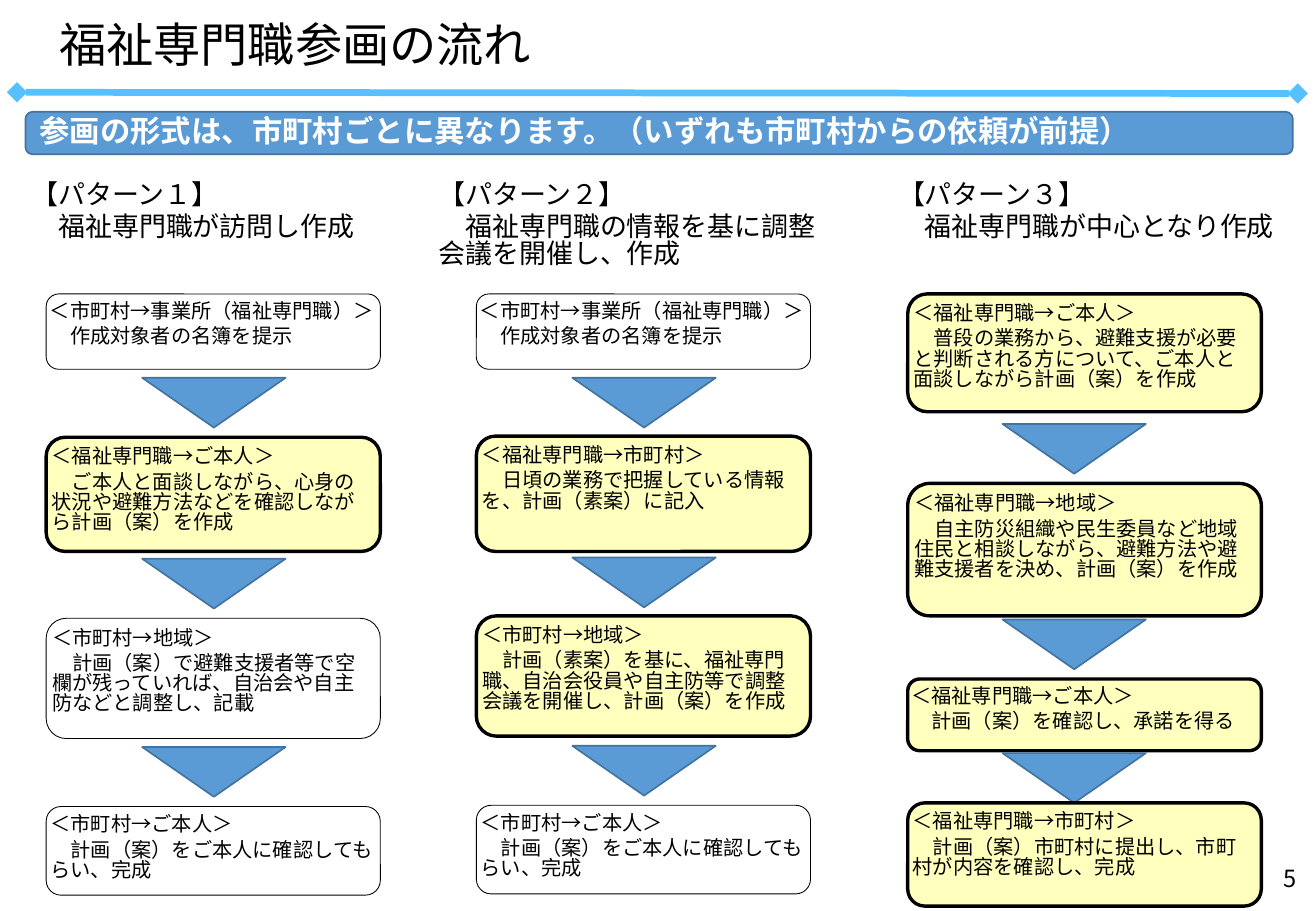
from dataclasses import dataclass

from lxml import etree
from pptx import Presentation
from pptx.dml.color import RGBColor
from pptx.enum.shapes import MSO_CONNECTOR, MSO_SHAPE
from pptx.enum.text import MSO_ANCHOR, PP_ALIGN
from pptx.oxml.ns import qn
from pptx.util import Pt

EMU_PER_PX = 9144  # 100 px to the inch
FONT = "Noto Sans CJK JP"
BLACK, WHITE, YELLOW = "000000", "FFFFFF", "FFFFBE"
BLUE, DARK_BLUE, SKY = "5B9BD5", "43739E", "57C0FF"
ROUNDED, TRIANGLE = MSO_SHAPE.ROUNDED_RECTANGLE, MSO_SHAPE.ISOSCELES_TRIANGLE
STRAIGHT = MSO_CONNECTOR.STRAIGHT
TOP, MIDDLE = MSO_ANCHOR.TOP, MSO_ANCHOR.MIDDLE
LEFT, RIGHT = PP_ALIGN.LEFT, PP_ALIGN.RIGHT
ARROW_WIDTH, ARROW_HEIGHT = 118, 41
STEP_INSETS = (0, 4)


@dataclass
class Step:
    top: int
    height: int
    by_specialist: bool
    route: str
    action: str
    arrow_top: int | None = None


@dataclass
class Pattern:
    heading_left: int
    heading_width: int
    heading: list[str]
    left: int
    width: int
    arrow_left: int
    steps: list[Step]


PATTERNS = [
    Pattern(26, 299, ["【パターン１】", "　福祉専門職が訪問し作成"], 38, 275, 117, [
        Step(242, 62, False, "＜市町村→事業所（福祉専門職）＞", "　作成対象者の名簿を提示", 311),
        Step(360, 94, True, "＜福祉専門職→ご本人＞",
             "　ご本人と面談しながら、心身の状況や避難方法などを確認しながら計画（案）を作成", 460),
        Step(509, 99, False, "＜市町村→地域＞",
             "　計画（案）で避難支援者等で空欄が残っていれば、自治会や自主防などと調整し、記載", 615),
        Step(664, 73, False, "＜市町村→ご本人＞", "　計画（案）をご本人に確認してもらい、完成"),
    ]),
    Pattern(361, 323, ["【パターン２】", "　福祉専門職の情報を基に調整会議を開催し、作成"], 392, 275, 471, [
        Step(242, 62, False, "＜市町村→事業所（福祉専門職）＞", "　作成対象者の名簿を提示", 311),
        Step(359, 95, True, "＜福祉専門職→市町村＞",
             "　日頃の業務で把握している情報を、計画（素案）に記入", 459),
        Step(507, 99, True, "＜市町村→地域＞",
             "　計画（素案）を基に、福祉専門職、自治会役員や自主防等で調整会議を開催し、計画（案）を作成", 614),
        Step(663, 73, False, "＜市町村→ご本人＞", "　計画（案）をご本人に確認してもらい、完成"),
    ]),
    Pattern(739, 322, ["【パターン３】", "　福祉専門職が中心となり作成"], 747, 291, 825, [
        Step(242, 97, True, "＜福祉専門職→ご本人＞",
             "　普段の業務から、避難支援が必要と判断される方について、ご本人と面談しながら計画（案）を作成", 349),
        Step(398, 109, True, "＜福祉専門職→地域＞",
             "　自主防災組織や民生委員など地域住民と相談しながら、避難方法や避難支援者を決め、計画（案）を作成", 510),
        Step(559, 59, True, "＜福祉専門職→ご本人＞", "　計画（案）を確認し、承諾を得る", 620),
        Step(661, 85, True, "＜福祉専門職→市町村＞", "　計画（案）市町村に提出し、市町村が内容を確認し、完成"),
    ]),
]


def px(length: int) -> int:
    return length * EMU_PER_PX


def rgb(value: str) -> RGBColor:
    return RGBColor.from_string(value)


def write(box, lines: list[str], size: int, color: str = BLACK, bold: bool = False,
          align=LEFT, anchor=TOP, insets: tuple[int, int] = (10, 5),
          spacing: float = 0.83) -> None:
    frame = box.text_frame
    frame.word_wrap = True
    frame.vertical_anchor = anchor
    frame.margin_left = frame.margin_right = px(insets[0])
    frame.margin_top = frame.margin_bottom = px(insets[1])
    frame.text = "\n".join(lines)
    for index, para in enumerate(frame.paragraphs):
        para.alignment = align
        para.line_spacing = spacing
        para.space_before = Pt(3 if index else 0)
        for span in para.runs:
            span.font.size = Pt(size)
            span.font.bold = bold
            span.font.color.rgb = rgb(color)
            span.font.name = FONT
            etree.SubElement(span.font._element, qn("a:ea"), typeface=FONT)


def add_text(page, left: int, top: int, width: int, height: int):
    return page.shapes.add_textbox(px(left), px(top), px(width), px(height))


def add_box(page, kind, left: int, top: int, width: int, height: int,
            fill: str | None, line: str, weight: float):
    box = page.shapes.add_shape(kind, px(left), px(top), px(width), px(height))
    box.shadow.inherit = False
    if fill:
        box.fill.solid()
        box.fill.fore_color.rgb = rgb(fill)
    else:
        box.fill.background()
    box.line.color.rgb = rgb(line)
    box.line.width = Pt(weight)
    return box


def add_rule(page) -> None:
    rule = page.shapes.add_connector(STRAIGHT, px(14), px(76), px(1068), px(77))
    rule.line.color.rgb = rgb(SKY)
    rule.line.width = Pt(4)
    outline = rule.line._get_or_add_ln()
    for end in ("a:headEnd", "a:tailEnd"):
        etree.SubElement(outline, qn(end), type="diamond")
    etree.SubElement(rule._element.spPr, qn("a:effectLst"))


def add_pattern(page, pattern: Pattern) -> None:
    heading = add_text(page, pattern.heading_left, 147, pattern.heading_width, 79)
    write(heading, pattern.heading, 16, insets=STEP_INSETS)
    for step in pattern.steps:
        fill, weight = (YELLOW, 2) if step.by_specialist else (None, 0.5)
        box = add_box(page, ROUNDED, pattern.left, step.top, pattern.width, step.height,
                      fill, BLACK, weight)
        write(box, [step.route, step.action], 12, insets=STEP_INSETS)
        if step.arrow_top is not None:
            arrow = add_box(page, TRIANGLE, pattern.arrow_left, step.arrow_top,
                            ARROW_WIDTH, ARROW_HEIGHT, BLUE, DARK_BLUE, 1)
            arrow.rotation = 180


def main() -> None:
    deck = Presentation()
    deck.slide_width, deck.slide_height = px(1083), px(750)
    page = deck.slides.add_slide(deck.slide_layouts[6])

    # Title and rule
    write(add_text(page, 0, 13, 1083, 48), ["　福祉専門職参画の流れ"], 28, spacing=0.9)
    add_rule(page)

    # Key message
    banner = add_box(page, ROUNDED, 21, 92, 1043, 35, BLUE, DARK_BLUE, 1)
    write(banner, ["参画の形式は、市町村ごとに異なります。（いずれも市町村からの依頼が前提）"],
          18, WHITE, bold=True, anchor=MIDDLE)

    # Three flows
    for pattern in PATTERNS:
        add_pattern(page, pattern)

    # Page number
    write(add_text(page, 850, 705, 227, 40), ["5"], 14, align=RIGHT, anchor=MIDDLE)

    deck.save("out.pptx")


if __name__ == "__main__":
    main()
